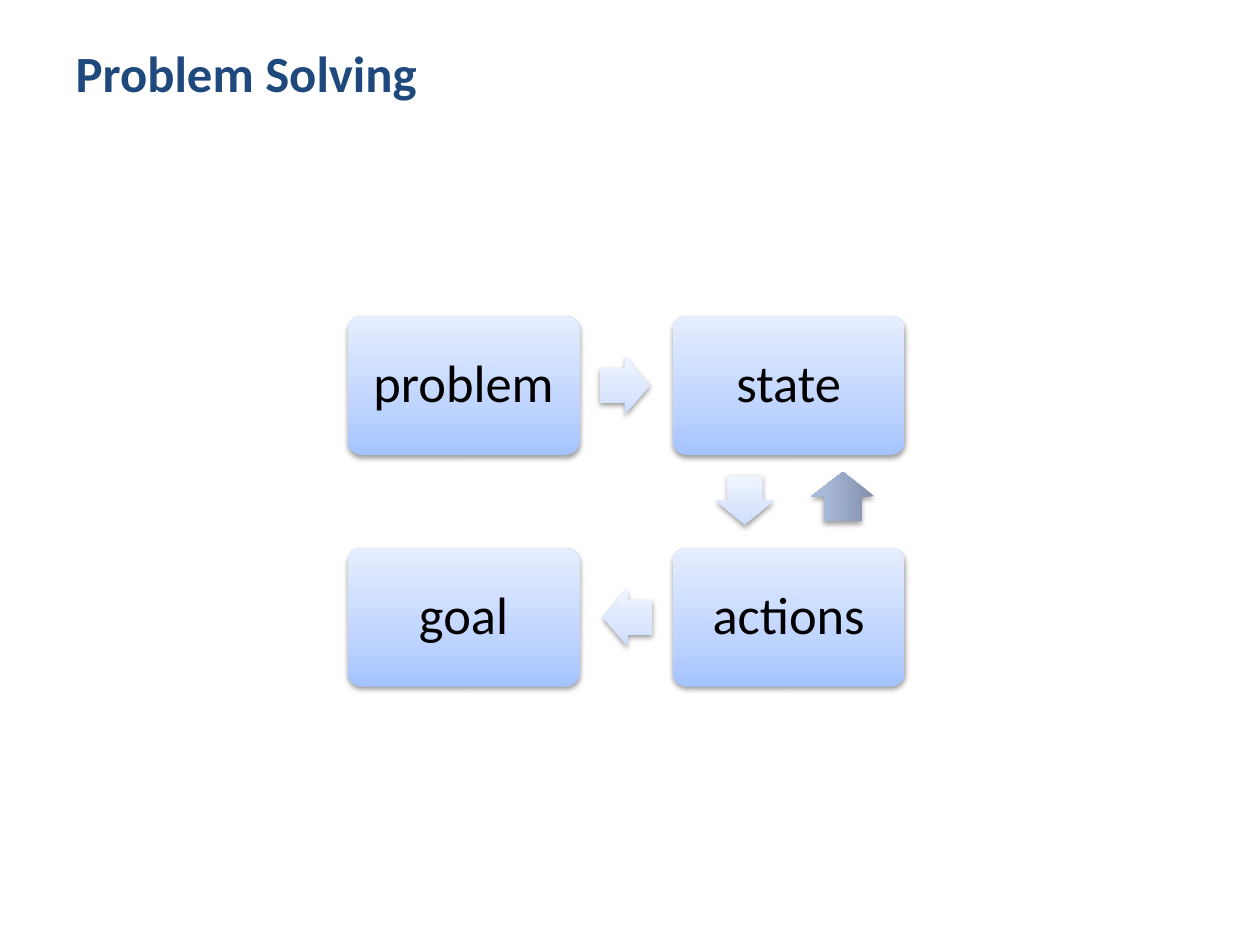
import pptx
import pptx.util
import pptx.oxml
import pptx.oxml.ns
from pptx.dml.color import RGBColor
from pptx.enum.shapes import MSO_SHAPE
from pptx.enum.text import MSO_ANCHOR, PP_ALIGN

NAVY = RGBColor(0x1F, 0x49, 0x7D)
BLACK = RGBColor(0, 0, 0)
BOX_STOPS = (
    (0, RGBColor(0xA4, 0xC4, 0xFF)),
    (35, RGBColor(0xBF, 0xD4, 0xFF)),
    (100, RGBColor(0xE6, 0xEE, 0xFF)),
)
PALE_STOPS = (
    (0, RGBColor(0xCD, 0xDD, 0xFE)),
    (35, RGBColor(0xDB, 0xE6, 0xFE)),
    (100, RGBColor(0xF0, 0xF5, 0xFF)),
)
SLATE_STOPS = (
    (0, RGBColor(0x81, 0x8F, 0xA8)),
    (80, RGBColor(0xA8, 0xB9, 0xDA)),
    (100, RGBColor(0xA7, 0xBA, 0xDC)),
)

GRID_LEFT, GRID_TOP = 2.76, 2.51
COLUMN_STEP, ROW_STEP = 2.58, 1.84
BOX_WIDTH, BOX_HEIGHT = 1.84, 1.1
PALE_SIZE = (0.39, 0.46)
SLATE_SIZE = (0.39, 0.5)

STEPS = (("problem", 0, 0), ("state", 1, 0), ("actions", 1, 1), ("goal", 0, 1))
ARROWS = (
    (4.96, 3.06, 0, PALE_SIZE, PALE_STOPS, False),
    (5.91, 3.97, 90, PALE_SIZE, PALE_STOPS, False),
    (4.98, 4.9, 180, PALE_SIZE, PALE_STOPS, False),
    (6.69, 3.94, 270, SLATE_SIZE, SLATE_STOPS, True),
)


def apply_format(target, values):
    for name, value in values.items():
        setattr(target, name, value)


def write_text(frame, text, size, color, bold, paragraph_format, frame_format):
    apply_format(frame, frame_format)
    frame.text = text
    para = frame.paragraphs[0]
    apply_format(para, paragraph_format)
    apply_format(para.font, {"name": "Calibri", "size": pptx.util.Pt(size), "bold": bold})
    para.font.color.rgb = color


def fill_gradient(shape, stops, turns):
    shape.fill.gradient()
    old = shape.element.spPr.find(pptx.oxml.ns.qn("a:gradFill"))
    marks = "".join(
        f'<a:gs pos="{share * 1000}"><a:srgbClr val="{color}"/></a:gs>'
        for share, color in stops
    )
    new = pptx.oxml.parse_xml(
        f'<a:gradFill {pptx.oxml.ns.nsdecls("a")} rotWithShape="{int(turns)}">'
        f'<a:gsLst>{marks}</a:gsLst><a:lin ang="16200000" scaled="0"/></a:gradFill>'
    )
    old.getparent().replace(old, new)


def add_shadow(shape):
    shape.shadow.inherit = False
    effects = shape.element.spPr.find(pptx.oxml.ns.qn("a:effectLst"))
    effects.append(pptx.oxml.parse_xml(
        f'<a:outerShdw {pptx.oxml.ns.nsdecls("a")} blurRad="40000" dist="20000" '
        'dir="5400000" rotWithShape="0"><a:srgbClr val="000000">'
        '<a:alpha val="38000"/></a:srgbClr></a:outerShdw>'
    ))


def add_glossy_shape(page, kind, place, adjustments, stops, turns=False):
    shape = page.shapes.add_shape(kind, *map(pptx.util.Inches, place))
    for index, value in enumerate(adjustments):
        shape.adjustments[index] = value
    shape.line.fill.background()
    fill_gradient(shape, stops, turns)
    add_shadow(shape)
    return shape


def add_step(page, text, column, row):
    place = (
        GRID_LEFT + column * COLUMN_STEP,
        GRID_TOP + row * ROW_STEP,
        BOX_WIDTH,
        BOX_HEIGHT,
    )
    box = add_glossy_shape(page, MSO_SHAPE.ROUNDED_RECTANGLE, place, (0.1,), BOX_STOPS)
    inset = pptx.util.Inches(0.15)
    write_text(
        box.text_frame, text, 30, BLACK, False,
        {"alignment": PP_ALIGN.CENTER, "line_spacing": 0.9},
        {"word_wrap": True, "vertical_anchor": MSO_ANCHOR.MIDDLE,
         "margin_left": inset, "margin_right": inset,
         "margin_top": inset, "margin_bottom": inset},
    )


def add_arrow(page, center_x, center_y, rotation, size, stops, turns):
    width, height = size
    place = (center_x - width / 2, center_y - height / 2, width, height)
    arrow = add_glossy_shape(page, MSO_SHAPE.RIGHT_ARROW, place, (0.6, 0.5), stops, turns)
    arrow.rotation = rotation


def set_title(page, text):
    title = page.shapes.title
    places = {"left": 0.5, "top": 0.26, "width": 8.52, "height": 0.63}
    apply_format(title, {name: pptx.util.Inches(value) for name, value in places.items()})
    write_text(
        title.text_frame, text, 29, NAVY, True,
        {"alignment": PP_ALIGN.LEFT},
        {"word_wrap": True, "vertical_anchor": MSO_ANCHOR.MIDDLE},
    )


def main():
    deck = pptx.Presentation()
    deck.slide_width = pptx.util.Inches(10)
    deck.slide_height = pptx.util.Inches(7.5)
    page = deck.slides.add_slide(deck.slide_layouts.get_by_name("Title Only"))
    set_title(page, "Problem Solving")
    for step in STEPS:
        add_step(page, *step)
    for arrow in ARROWS:
        add_arrow(page, *arrow)
    deck.save("out.pptx")


if __name__ == "__main__":
    main()
